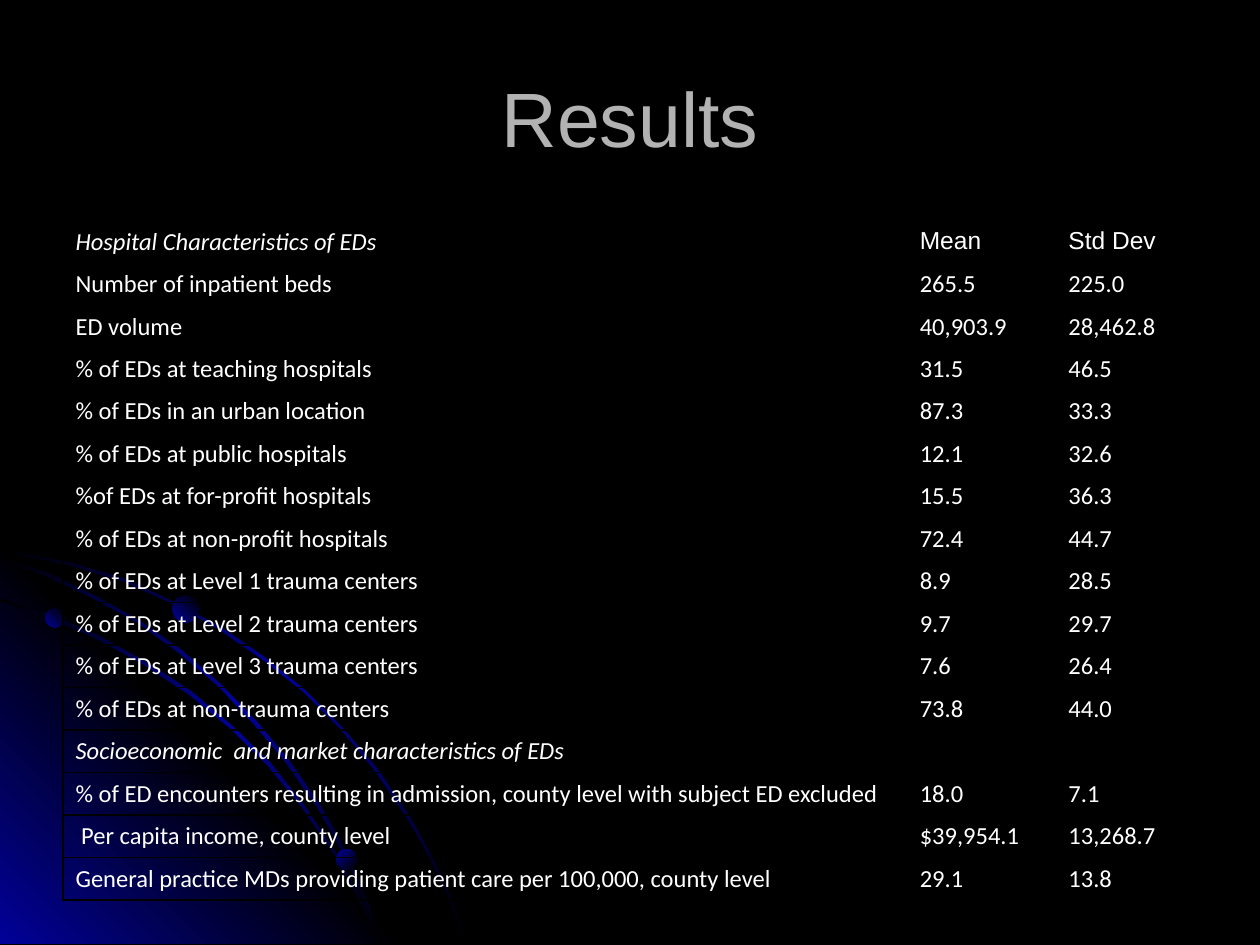
"""Builds the Results slide: emergency department characteristics over a dark backdrop of blue arcs."""
from copy import deepcopy

from pptx import Presentation
from pptx.dml.color import RGBColor
from pptx.enum.shapes import MSO_SHAPE
from pptx.enum.text import MSO_ANCHOR, PP_ALIGN
from pptx.oxml import parse_xml
from pptx.oxml.ns import nsdecls, qn
from pptx.util import Pt

PX = 9144
OVAL = MSO_SHAPE.OVAL
MIDDLE = MSO_ANCHOR.MIDDLE
CENTER = PP_ALIGN.CENTER
BLACK, BLUE, GREY, WHITE = "000000", "010199", "B2B2B2", "FFFFFF"
HANGING = 38 * PX


def rgb(value):
    return RGBColor.from_string(value)


def paint_gradient(shape, colors, angle):
    shape.shadow.inherit = False
    shape.line.fill.background()
    shape.fill.gradient()
    shape.fill.gradient_angle = angle
    stop_list = shape._element.spPr.find(qn("a:gradFill")).find(qn("a:gsLst"))
    while len(stop_list) < len(colors):
        stop_list.append(deepcopy(stop_list[0]))
    for i, (stop, color) in enumerate(zip(shape.fill.gradient_stops, colors)):
        stop.position = i / (len(colors) - 1)
        stop.color.rgb = rgb(color)


prs = Presentation()
prs.slide_width, prs.slide_height = 1000 * PX, 750 * PX
slide = prs.slides.add_slide(prs.slide_layouts[5])
slide.background.fill.solid()
slide.background.fill.fore_color.rgb = rgb(BLACK)

streak = (BLACK, BLUE, BLACK)
backdrop = [
    (streak, 315, [
        (57, 447), (28, 441), (0, 435), (0, 438), (28, 443), (56, 449), (97, 461), (135, 478),
        (173, 499), (208, 523), (241, 549), (271, 579), (298, 612), (323, 649), (337, 673),
        (350, 698), (360, 723), (370, 749), (372, 749), (362, 723), (352, 698), (339, 673),
        (325, 648), (300, 611), (272, 578), (242, 548), (209, 521), (174, 497), (136, 477),
        (98, 459)]),
    ((BLUE, BLACK, BLUE), 45, [(322, 749), (0, 749), (0, 427)]),
    (streak, 315, [
        (285, 714), (294, 732), (301, 749), (303, 749), (296, 730), (286, 712), (266, 676),
        (242, 640), (215, 606), (184, 576), (152, 549), (117, 526), (79, 505), (41, 488),
        (0, 475), (0, 477), (39, 490), (77, 507), (115, 528), (150, 551), (183, 578),
        (213, 608), (240, 641), (265, 677)]),
    (streak, 315, [
        (0, 442), (0, 444), (36, 457), (74, 475), (109, 494), (142, 518), (173, 544), (202, 575),
        (227, 605), (252, 641), (267, 667), (280, 694), (292, 722), (301, 749), (303, 749),
        (294, 720), (282, 693), (269, 665), (254, 639), (229, 603), (204, 573), (175, 543),
        (144, 516), (111, 493), (76, 473), (39, 455)]),
]
for colors, angle, outline in backdrop:
    builder = slide.shapes.build_freeform(*outline[0], scale=PX)
    builder.add_line_segments(outline[1:], close=True)
    paint_gradient(builder.convert_to_shape(), colors, angle)

for left, top, size, angle in [(36, 483, 15, 45), (267, 674, 16, 315), (137, 473, 21, 45)]:
    bead = slide.shapes.add_shape(OVAL, left * PX, top * PX, size * PX, size * PX)
    paint_gradient(bead, (BLUE, BLACK), angle)

title = slide.shapes.title
title.left, title.top, title.width, title.height = 50 * PX, 30 * PX, 900 * PX, 125 * PX
title.text_frame.text = "Results"
title.text_frame.vertical_anchor = MIDDLE
heading = title.text_frame.paragraphs[0]
heading.alignment = CENTER
for name, value in {"name": "Arial", "size": Pt(44)}.items():
    setattr(heading.runs[0].font, name, value)
heading.runs[0].font.color.rgb = rgb(GREY)

rows = [
    ("Hospital Characteristics of EDs", "Mean", "Std Dev"),
    ("Number of inpatient beds", "265.5", "225.0"),
    ("ED volume", "40,903.9", "28,462.8"),
    ("% of EDs at teaching hospitals", "31.5", "46.5"),
    ("% of EDs in an urban location", "87.3", "33.3"),
    ("% of EDs at public hospitals", "12.1", "32.6"),
    ("%of EDs at for-profit hospitals", "15.5", "36.3"),
    ("% of EDs at non-profit hospitals", "72.4", "44.7"),
    ("% of EDs at Level 1 trauma centers", "8.9", "28.5"),
    ("% of EDs at Level 2 trauma centers", "9.7", "29.7"),
    ("% of EDs at Level 3 trauma centers", "7.6", "26.4"),
    ("% of EDs at non-trauma centers", "73.8", "44.0"),
    ("Socioeconomic  and market characteristics of EDs", "", ""),
    ("% of ED encounters resulting in admission, county level with subject ED excluded",
     "18.0", "7.1"),
    (" Per capita income, county level", "$39,954.1", "13,268.7"),
    ("General practice MDs providing patient care per 100,000, county level", "29.1", "13.8"),
]
section_rows = (0, 12)
table = slide.shapes.add_table(
    len(rows), 3, 50 * PX, 175 * PX, 900 * PX, 33 * len(rows) * PX).table
table.first_row = table.horz_banding = False
for column, width in zip(table.columns, (670, 118, 112)):
    column.width = width * PX

for r, row in enumerate(rows):
    for c, text in enumerate(row):
        cell = table.cell(r, c)
        cell_format = cell._tc.get_or_add_tcPr()
        for side in ("lnL", "lnR", "lnT", "lnB"):
            cell_format.append(parse_xml(
                f'<a:{side} {nsdecls("a")} w="12700"><a:solidFill>'
                f'<a:srgbClr val="{BLACK}"/></a:solidFill></a:{side}>'))
        cell.fill.background()
        paragraph = cell.text_frame.paragraphs[0]
        column_label = r == 0 and c > 0
        if not text:
            paragraph._p.get_or_add_endParaRPr().set("sz", "1400")
            continue
        if not column_label:
            indents = paragraph._p.get_or_add_pPr()
            indents.set("marL", str(HANGING))
            indents.set("indent", str(-HANGING))
        entry = paragraph.add_run()
        entry.text = text
        look = {"name": "Arial" if column_label else "Calibri", "size": Pt(14),
                "italic": c == 0 and r in section_rows}
        for name, value in look.items():
            setattr(entry.font, name, value)
        entry.font.color.rgb = rgb(WHITE)

prs.save("out.pptx")
